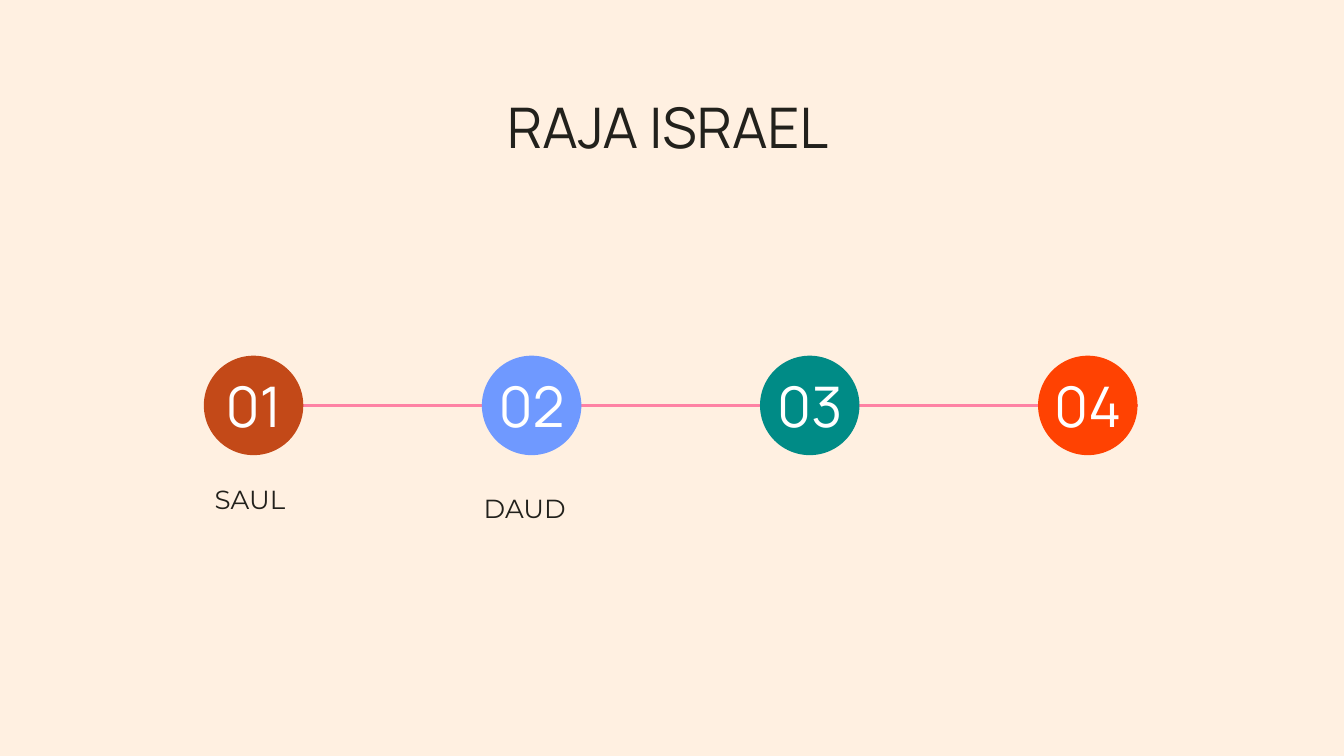
from lxml import etree
from pptx import Presentation
from pptx.dml.color import RGBColor
from pptx.enum.shapes import MSO_CONNECTOR, MSO_SHAPE
from pptx.enum.text import MSO_ANCHOR, PP_ALIGN
from pptx.oxml.ns import qn
from pptx.util import Inches, Pt

STRAIGHT = MSO_CONNECTOR.STRAIGHT
OVAL = MSO_SHAPE.OVAL
TOP, MIDDLE = MSO_ANCHOR.TOP, MSO_ANCHOR.MIDDLE
CENTER = PP_ALIGN.CENTER
LEFT_SIDE, RIGHT_SIDE = 1, 3
TITLE_ONLY = 5

COLORS = {
    "cream": "FFF0E1", "ink": "22211C", "white": "FFFFFF", "pink": "FE82A4",
    "rust": "C34918", "blue": "6F99FF", "teal": "008B86", "orange": "FF4202",
}
HEADING, BODY = "Manrope", "Montserrat"
CELL = 0.1  # inches: the slide is 100 columns wide, in 16:9


def color(name):
    return RGBColor.from_string(COLORS[name])


def grid(*cells):
    return [Inches(cell * CELL) for cell in cells]


def write(shape, text, *, font=HEADING, size=30, ink="ink", anchor=TOP, spacing=0):
    frame = shape.text_frame
    frame.word_wrap = True
    frame.vertical_anchor = anchor
    frame.margin_left = frame.margin_right = Inches(0.1)
    frame.margin_top = frame.margin_bottom = Inches(0.1)
    paragraph = frame.paragraphs[0]
    paragraph.alignment = CENTER
    paragraph.space_before = paragraph.space_after = Pt(spacing)
    run = paragraph.add_run()
    run.text = text
    run.font.name, run.font.size = font, Pt(size)
    run.font.bold = False
    run.font.color.rgb = color(ink)


class Timeline:
    def __init__(self, deck):
        self.slide = deck.slides.add_slide(deck.slide_layouts[TITLE_ONLY])
        self.shapes = self.slide.shapes
        fill = self.slide.background.fill
        fill.solid()
        fill.fore_color.rgb = color("cream")

    def title(self, text, *box):
        heading = self.shapes.title
        heading.left, heading.top, heading.width, heading.height = grid(*box)
        write(heading, text)

    def text(self, text, *box, **style):
        write(self.shapes.add_textbox(*grid(*box)), text, **style)

    def circle(self, center, middle, diameter, fill):
        dot = self.shapes.add_shape(OVAL, *grid(
            center - diameter / 2, middle - diameter / 2, diameter, diameter))
        dot.shadow.inherit = False
        dot.fill.solid()
        dot.fill.fore_color.rgb = color(fill)
        dot.line.fill.background()
        return dot

    def line(self, start, end, row):
        track = self.shapes.add_connector(STRAIGHT, *grid(start, row, end, row))
        track.line.color.rgb = color("pink")
        track.line.width = Pt(1.5)
        properties = track._element.spPr
        etree.SubElement(properties, qn("a:effectLst"))
        return track


def main():
    deck = Presentation()
    deck.slide_width = Inches(10)
    deck.slide_height = deck.slide_width * 9 // 16
    timeline = Timeline(deck)
    timeline.title("RAJA ISRAEL ", 7.8, 5.9, 84.4, 5.2)

    # Track with four evenly spaced stops; the track lies behind them
    first, step, axis, diameter = 18.87, 20.69, 30.17, 7.4
    centers = [first + step * stop for stop in range(4)]
    track = timeline.line(centers[0], centers[-1], axis)
    stops = [timeline.circle(center, axis, diameter, fill)
             for center, fill in zip(centers, ("rust", "blue", "teal", "orange"))]
    track.begin_connect(stops[0], LEFT_SIDE)
    track.end_connect(stops[-1], RIGHT_SIDE)

    # Stop numbers
    for number, center in enumerate(centers, 1):
        timeline.text(f"{number:02}", center - 10.2, axis - 2.22, 20.4, 4.4,
                      ink="white", anchor=MIDDLE)

    # Names of the kings
    for king, left, top in (("SAUL ", 10.4, 35), ("DAUD ", 30.85, 35.65)):
        timeline.text(king, left, top, 16.9, 7, font=BODY, size=14, spacing=16)

    deck.save("out.pptx")


if __name__ == "__main__":
    main()
